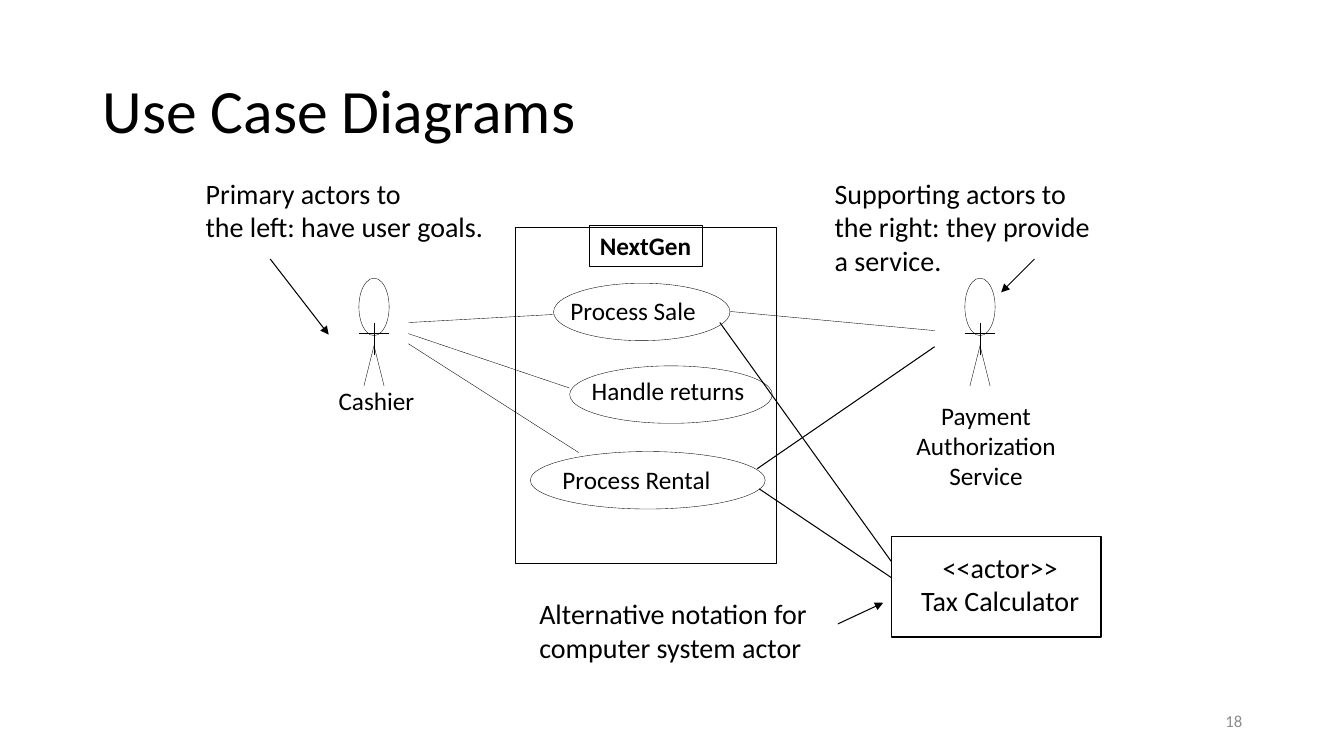
"""Build the use case diagram slide."""
import pptx
import pptx.dml.color
import pptx.enum.shapes
import pptx.enum.text
import pptx.oxml
import pptx.oxml.ns
import pptx.util

COLUMNS, ROWS = 13.33, 7.5
CELL = pptx.util.Inches(1)
THIN, NORMAL = 0.25, 0.75
SHAPES = pptx.enum.shapes.MSO_SHAPE
ALIGN = pptx.enum.text.PP_ALIGN
ANCHOR = pptx.enum.text.MSO_ANCHOR
FIT = pptx.enum.text.MSO_AUTO_SIZE


def grid(*cells):
    """Turn grid columns and rows into slide lengths."""
    return [round(cell * CELL) for cell in cells]


def color(value):
    """Turn a hex string into a colour."""
    return pptx.dml.color.RGBColor.from_string(value)


def apply(target, values):
    """Set attributes from a dict of format values."""
    for name, value in values.items():
        setattr(target, name, value)


def style_line(line, weight):
    """Give a line the diagram's black colour and a weight."""
    line.color.rgb = color("000000")
    line.width = pptx.util.Pt(weight)


def add_text(slide, box, lines, size, align=ALIGN.LEFT, bold=False, ink="000000",
             anchor=ANCHOR.TOP, wrap=False, spacing=1.0):
    """Add a text box with one paragraph for each line."""
    frame = slide.shapes.add_textbox(*grid(*box)).text_frame
    apply(frame, {"word_wrap": wrap, "vertical_anchor": anchor,
                  "auto_size": FIT.NONE if wrap else FIT.SHAPE_TO_FIT_TEXT})
    frame.text = "\n".join(lines)
    for paragraph in frame.paragraphs:
        apply(paragraph, {"alignment": align, "line_spacing": spacing})
        for run in paragraph.runs:
            apply(run.font, {"name": "Calibri", "size": pptx.util.Pt(size), "bold": bold})
            run.font.color.rgb = color(ink)


def add_outline(slide, kind, box, weight):
    """Add an unfilled preset shape."""
    shape = slide.shapes.add_shape(kind, *grid(*box))
    shape.shadow.inherit = False
    shape.fill.background()
    style_line(shape.line, weight)


def add_line(slide, start, end, weight, arrow=False):
    """Add a straight connector, with an arrowhead at its end if asked."""
    connector = slide.shapes.add_connector(
        pptx.enum.shapes.MSO_CONNECTOR.STRAIGHT, *grid(*start, *end))
    style_line(connector.line, weight)
    properties = connector.element.spPr
    if arrow:
        head = pptx.oxml.parse_xml(
            f'<a:tailEnd {pptx.oxml.ns.nsdecls("a")} type="triangle"/>')
        connector.line._get_or_add_ln().append(head)
    properties.append(pptx.oxml.parse_xml(
        f'<a:effectLst {pptx.oxml.ns.nsdecls("a")}/>'))


def add_actor(slide, center, top):
    """Draw a stick figure."""
    add_line(slide, (center, top + 0.44), (center, top + 0.76), THIN)
    legs = [grid(center + step, top + drop)
            for step, drop in ((-0.1, 1.07), (0, 0.67), (0.1, 1.07))]
    builder = slide.shapes.build_freeform(*legs[0])
    builder.add_line_segments(legs[1:], close=False)
    shape = builder.convert_to_shape()
    shape.shadow.inherit = False
    shape.fill.background()
    style_line(shape.line, THIN)
    add_outline(slide, SHAPES.OVAL, (center - 0.15, top, 0.3, 0.57), THIN)
    add_line(slide, (center - 0.15, top + 0.55), (center + 0.15, top + 0.55), THIN)


def add_use_case(slide, left, top, width, label, label_box):
    """Draw a use case ellipse and its label."""
    add_outline(slide, SHAPES.OVAL, (left, top, width, 0.57), THIN)
    add_text(slide, label_box, [label], 18)


def main():
    """Build and save the slide."""
    presentation = pptx.Presentation()
    width, height = grid(COLUMNS, ROWS)
    apply(presentation, {"slide_width": width, "slide_height": height})
    slide = presentation.slides.add_slide(presentation.slide_layouts[6])

    add_text(slide, (0.92, 0.4, 11.5, 1.45), ["Use Case Diagrams"], 44,
             anchor=ANCHOR.MIDDLE, wrap=True, spacing=0.9)
    add_text(slide, (9.42, 6.95, 3, 0.4), ["18"], 12, ALIGN.RIGHT, ink="8C8C8C",
             anchor=ANCHOR.MIDDLE, wrap=True)

    for box in ((5.11, 2.26, 2.59, 3.33), (5.85, 2.24, 1.12, 0.4), (8.84, 5.32, 2.08, 1)):
        add_outline(slide, SHAPES.RECTANGLE, box, NORMAL)
    add_text(slide, (5.85, 2.24, 1.12, 0.4), ["NextGen"], 18, bold=True)
    add_text(slide, (9.03, 5.41, 1.78, 0.77), ["<<actor>>", "Tax Calculator"], 20, ALIGN.CENTER)

    add_use_case(slide, 5.49, 2.81, 1.75, "Process Sale", (5.56, 2.88, 1.46, 0.4))
    add_use_case(slide, 5.65, 3.63, 2.01, "Handle returns", (5.77, 3.67, 1.73, 0.4))
    add_use_case(slide, 5.26, 4.48, 2.33, "Process Rental", (5.48, 4.56, 1.69, 0.4))

    for center in (3.71, 9.72):
        add_actor(slide, center, 2.76)
    add_text(slide, (3.26, 3.77, 0.96, 0.4), ["Cashier"], 18)
    add_text(slide, (8.95, 3.92, 1.66, 1), ["Payment", "Authorization", "Service"], 18,
             ALIGN.CENTER)

    associations = (
        ((4.05, 3.2), (5.49, 3.12), THIN),
        ((4.05, 3.31), (5.65, 3.85), THIN),
        ((4.05, 3.41), (5.74, 4.49), THIN),
        ((9.27, 3.28), (7.24, 3.09), THIN),
        ((7.51, 4.65), (9.27, 3.44), NORMAL),
        ((8.84, 5.73), (7.53, 4.85), NORMAL),
        ((8.84, 5.57), (7.14, 3.2), NORMAL),
    )
    for start, end, weight in associations:
        add_line(slide, start, end, weight)

    notes = (
        ((1.94, 1.7, 2.99, 0.77), ["Primary actors to", "the left: have user goals."],
         (2.68, 2.57), (3.26, 3.32)),
        ((8.18, 1.7, 2.76, 1.11),
         ["Supporting actors to", "the right: they provide", "a service."],
         (10.26, 2.57), (9.93, 2.9)),
        ((5.25, 5.87, 2.89, 0.77), ["Alternative notation for", "computer system actor"],
         (8.31, 6.19), (8.76, 5.98)),
    )
    for box, lines, start, end in notes:
        add_text(slide, box, lines, 20)
        add_line(slide, start, end, NORMAL, arrow=True)

    presentation.save("out.pptx")


if __name__ == "__main__":
    main()
